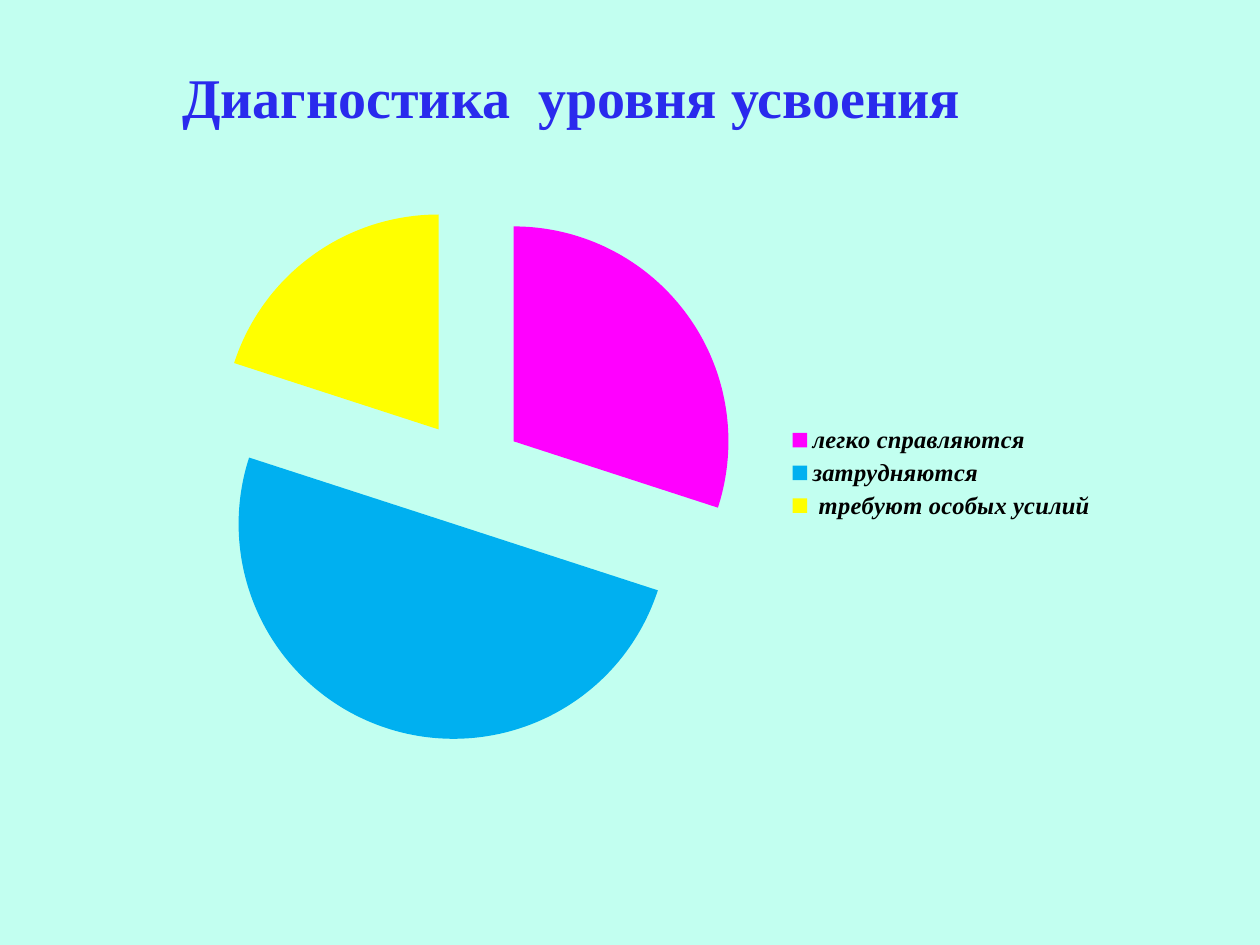
from dataclasses import dataclass

from lxml import etree
from pptx import Presentation
from pptx import util as u
from pptx.chart import data
from pptx.dml import color
from pptx.enum import chart as charts, text
from pptx.oxml import ns


@dataclass(frozen=True)
class Theme:
    font: str = "Times New Roman"
    background: str = "C2FFF0"
    title: str = "2A2AED"
    ink: str = "000000"
    slices: tuple = ("FF00FF", "00B0F0", "FFFF00")
    title_size: int = 32
    chart_size: int = 10
    legend_size: int = 14


class SlideBuilder:
    def __init__(self, page, theme):
        self.page = page
        self.theme = theme

    def background(self):
        self.paint(self.page.background.fill, self.theme.background)

    def paint(self, fill, shade):
        fill.solid()
        fill.fore_color.rgb = color.RGBColor.from_string(shade)

    def style(self, font, size, shade, bold=False, italic=False):
        font.name = self.theme.font
        font.size = u.Pt(size)
        font.bold = bold
        font.italic = italic
        font.color.rgb = color.RGBColor.from_string(shade)

    def title(self, wording, left, top, width, height):
        box = self.page.shapes.title
        box.left, box.top = u.Pt(left), u.Pt(top)
        box.width, box.height = u.Pt(width), u.Pt(height)
        frame = box.text_frame
        frame.text = wording
        frame.word_wrap = True
        frame.auto_size = text.MSO_AUTO_SIZE.NONE
        frame.vertical_anchor = text.MSO_ANCHOR.TOP
        para = frame.paragraphs[0]
        para.alignment = text.PP_ALIGN.CENTER
        self.style(para.font, self.theme.title_size, self.theme.title, bold=True)

    def place(self, element, following, inner=False, **fractions):
        for old in element.findall(ns.qn("c:layout")):
            element.remove(old)
        layout = etree.Element(ns.qn("c:layout"))
        manual = etree.SubElement(layout, ns.qn("c:manualLayout"))
        settings = {"layoutTarget": "inner"} if inner else {}
        settings.update(xMode="edge", yMode="edge", **fractions)
        for name, value in settings.items():
            etree.SubElement(manual, ns.qn(f"c:{name}")).set("val", str(value))
        element.find(ns.qn(following)).addprevious(layout)

    def pie(self, shares, explosion, left, top, width, height):
        source = data.CategoryChartData(number_format="General")
        source.categories = list(shares)
        source.add_series("Series 1", list(shares.values()))
        chart = self.page.shapes.add_chart(
            charts.XL_CHART_TYPE.PIE,
            u.Pt(left), u.Pt(top), u.Pt(width), u.Pt(height), source,
        ).chart
        self.style(chart.font, self.theme.chart_size, self.theme.ink)
        chart.has_title = False
        plot = chart.plots[0]
        plot.vary_by_categories = True
        series = plot.series[0]
        for index, shade in enumerate(self.theme.slices):
            point = series.points[index]
            self.paint(point.format.fill, shade)
            point.format.line.fill.background()
        exploded = etree.Element(ns.qn("c:explosion"))
        exploded.set("val", str(explosion))
        series._element.find(ns.qn("c:dPt")).addprevious(exploded)
        chart.has_legend = True
        legend = chart.legend
        legend.position = charts.XL_LEGEND_POSITION.RIGHT
        legend.include_in_layout = False
        self.style(legend.font, self.theme.legend_size, self.theme.ink,
                   bold=True, italic=True)
        area = plot._element.getparent()
        self.place(area, "c:pieChart", inner=True, x=0.04, y=0.03, w=0.57, h=0.94)
        self.place(legend._element, "c:overlay", x=0.66, y=0.41, w=0.33, h=0.18)


def main():
    deck = Presentation()
    deck.slide_width, deck.slide_height = u.Pt(720), u.Pt(540)
    page = deck.slides.add_slide(deck.slide_layouts[5])
    builder = SlideBuilder(page, Theme())
    builder.background()
    builder.title("Диагностика  уровня усвоения", 48, 32, 557, 46)
    shares = {"легко справляются": 30, "затрудняются": 50, " требуют особых усилий": 20}
    builder.pie(shares, 25, 93.6, 105.8, 538.6, 329)
    deck.save("out.pptx")


if __name__ == "__main__":
    main()
